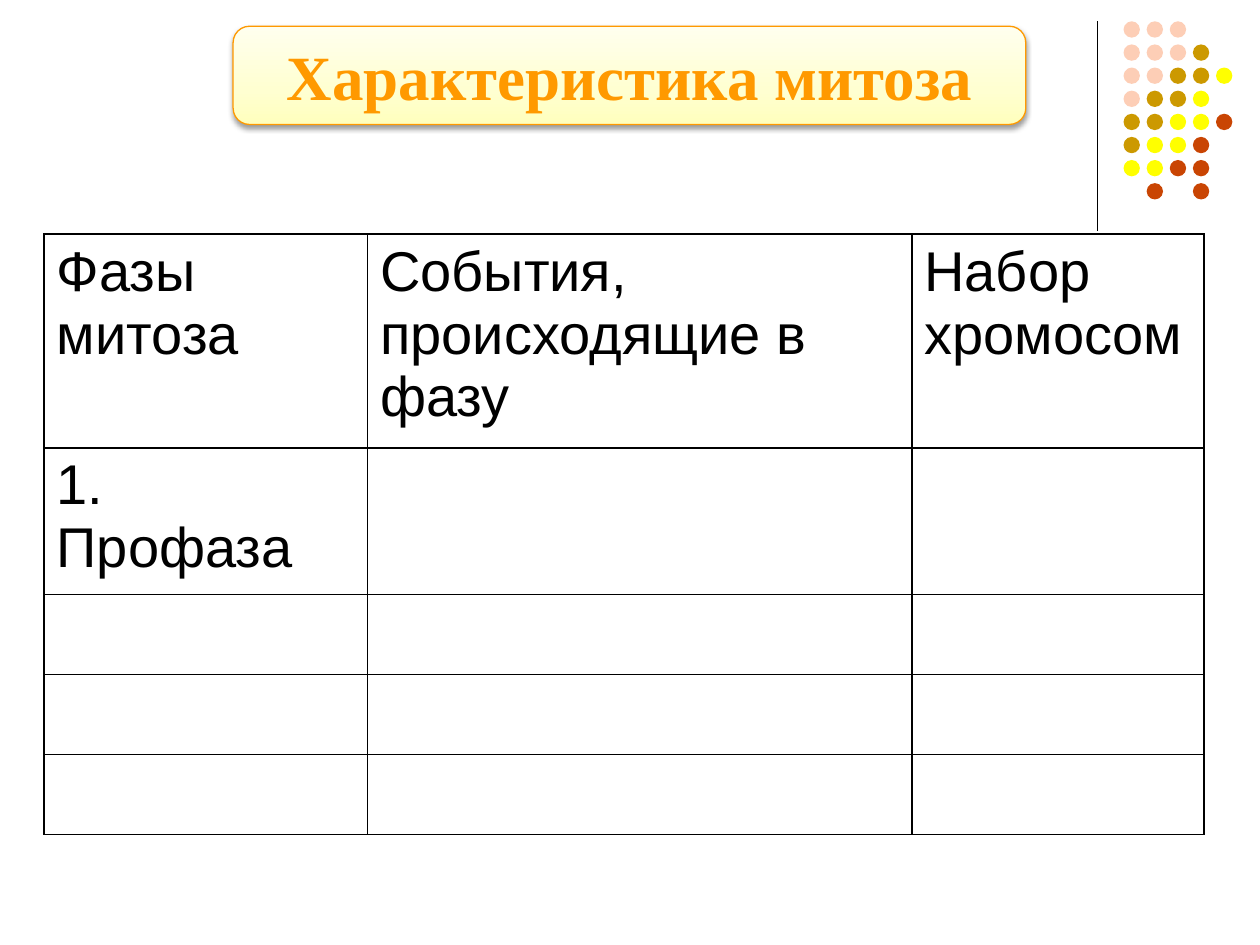
import copy

import pptx
import pptx.dml.color
import pptx.enum.shapes
import pptx.enum.text
import pptx.oxml
import pptx.oxml.ns
import pptx.util
from lxml import etree

Cm = pptx.util.Cm
Pt = pptx.util.Pt
RGB = pptx.dml.color.RGBColor
SHAPE = pptx.enum.shapes.MSO_SHAPE
qn = pptx.oxml.ns.qn

BLACK = RGB(0x00, 0x00, 0x00)
ORANGE = RGB(0xFF, 0x99, 0x00)
PINK = RGB(0xFD, 0xCE, 0xB6)
OCHRE = RGB(0xCC, 0x99, 0x00)
YELLOW = RGB(0xFF, 0xFF, 0x00)
RUST = RGB(0xC9, 0x45, 0x03)
TITLE_STOPS = [
    (0, RGB(0xFF, 0xFF, 0xBD)),
    (0.35, RGB(0xFF, 0xFF, 0xD1)),
    (1, RGB(0xFF, 0xFF, 0xEE)),
]

TITLE_FONT = {"name": "Times New Roman", "size": Pt(36), "bold": True}
CELL_FONT = {"name": "Arial", "size": Pt(32), "bold": False}

# One letter per dot, a blank where there is none
DOT_COLORS = {"p": PINK, "o": OCHRE, "y": YELLOW, "r": RUST}
DOT_ROWS = ["ppp", "pppo", "ppooy", "pooy", "ooyyr", "oyyr", "yyrr", " r r"]

COLUMNS = [6.52, 10.97, 5.89]
ROWS = [4.31, 2.96, 1.61, 1.61, 1.61]
CELLS = [
    ["Фазы митоза", "События, происходящие в фазу", "Набор\nхромосом"],
    ["1. Профаза", "", ""],
]


def format_font(font, values, color):
    for name, value in values.items():
        setattr(font, name, value)
    font.color.rgb = color


def add_divider(slide):
    line = slide.shapes.add_connector(
        pptx.enum.shapes.MSO_CONNECTOR.STRAIGHT,
        Cm(22.12), Cm(0.43), Cm(22.12), Cm(4.65))
    line.line.color.rgb = BLACK
    line.line.width = Pt(0.75)
    etree.SubElement(line._element.spPr, qn("a:effectLst"))


def add_dots(slide, left, top, pitch, size):
    group = slide.shapes.add_group_shape()
    for i, row in enumerate(DOT_ROWS):
        for j, key in enumerate(row):
            if key == " ":
                continue
            s = group.shapes.add_shape(
                SHAPE.OVAL, Cm(left + j * pitch), Cm(top + i * pitch),
                Cm(size), Cm(size))
            s.shadow.inherit = False
            s.fill.solid()
            s.fill.fore_color.rgb = DOT_COLORS[key]
            s.line.fill.background()


def add_title(slide, text):
    s = slide.shapes.add_shape(
        SHAPE.ROUNDED_RECTANGLE, Cm(4.7), Cm(0.53), Cm(15.98), Cm(1.98))
    s.line.color.rgb = ORANGE
    s.line.width = Pt(0.75)

    # Three-stop gradient, running upwards
    s.fill.gradient()
    s.fill.gradient_angle = 90
    stops = s._element.spPr.find(".//" + qn("a:gsLst"))
    stops.insert(1, copy.deepcopy(stops[0]))
    for stop, (position, color) in zip(s.fill.gradient_stops, TITLE_STOPS):
        stop.position = position
        stop.color.rgb = color

    # Soft shadow below
    s.shadow.inherit = False
    effects = s._element.spPr.find(qn("a:effectLst"))
    shadow = etree.SubElement(
        effects, qn("a:outerShdw"), blurRad="40000", dist="20000",
        dir="5400000", rotWithShape="0")
    color = etree.SubElement(shadow, qn("a:srgbClr"), val=str(BLACK))
    etree.SubElement(color, qn("a:alpha"), val="38000")

    tf = s.text_frame
    tf.word_wrap = True
    tf.vertical_anchor = pptx.enum.text.MSO_ANCHOR.MIDDLE
    p = tf.paragraphs[0]
    p.alignment = pptx.enum.text.PP_ALIGN.CENTER
    r = p.add_run()
    r.text = text
    format_font(r.font, TITLE_FONT, ORANGE)


def set_borders(cell, color, width):
    props = cell._tc.get_or_add_tcPr()
    for i, side in enumerate(("lnL", "lnR", "lnT", "lnB")):
        line = pptx.oxml.parse_xml(
            f'<a:{side} {pptx.oxml.ns.nsdecls("a")} w="{width}"><a:solidFill>'
            f'<a:srgbClr val="{color}"/></a:solidFill></a:{side}>')
        props.insert(i, line)


def add_phase_table(slide):
    table = slide.shapes.add_table(
        len(ROWS), len(COLUMNS), Cm(0.89), Cm(4.72),
        Cm(sum(COLUMNS)), Cm(sum(ROWS))).table
    table.first_row = False
    table.horz_banding = False
    for column, width in zip(table.columns, COLUMNS):
        column.width = Cm(width)
    for row, height in zip(table.rows, ROWS):
        row.height = Cm(height)
    for cell in table.iter_cells():
        cell.fill.background()
        set_borders(cell, BLACK, Pt(1))
    for i, texts in enumerate(CELLS):
        for j, text in enumerate(texts):
            tf = table.cell(i, j).text_frame
            tf.text = text
            for p in tf.paragraphs:
                for r in p.runs:
                    format_font(r.font, CELL_FONT, BLACK)


def main():
    prs = pptx.Presentation()
    prs.slide_width = Cm(25.4)
    prs.slide_height = Cm(19.05)
    slide = prs.slides.add_slide(prs.slide_layouts[6])

    # Corner decoration
    add_divider(slide)
    add_dots(slide, left=22.65, top=0.43, pitch=0.466, size=0.33)

    # Content
    add_title(slide, "Характеристика митоза")
    add_phase_table(slide)
    prs.save("out.pptx")


if __name__ == "__main__":
    main()
